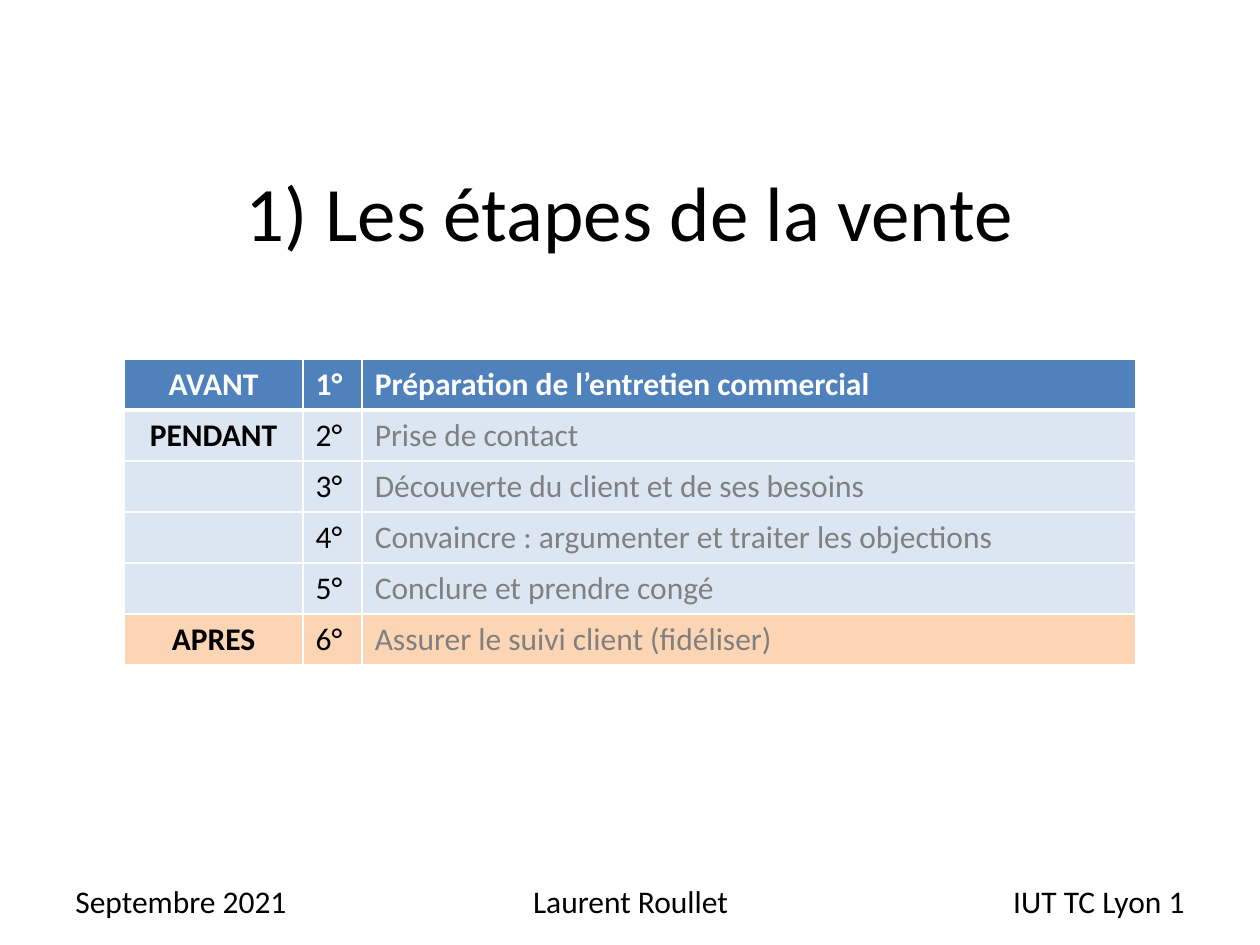
from lxml import etree
from pptx import Presentation
from pptx import util as u
from pptx.dml import color
from pptx.enum import text
from pptx.oxml import ns

TITLE = "1) Les étapes de la vente"
FOOTERS = [
    ("Septembre 2021", 0.05, 0.233, text.PP_ALIGN.LEFT),
    ("Laurent Roullet", 0.342, 0.317, text.PP_ALIGN.CENTER),
    ("IUT TC Lyon 1", 0.717, 0.233, text.PP_ALIGN.RIGHT),
]
STEPS = [
    ("AVANT", "Préparation de l’entretien commercial", "header"),
    ("PENDANT", "Prise de contact", "during"),
    ("", "Découverte du client et de ses besoins", "during"),
    ("", "Convaincre : argumenter et traiter les objections", "during"),
    ("", "Conclure et prendre congé", "during"),
    ("APRES", "Assurer le suivi client (fidéliser)", "after"),
]
THEME = {
    "font": "Calibri", "title": 44, "body": 18,
    "ink": "000000", "muted": "808080", "white": "FFFFFF",
    "header": "4F81BD", "during": "DCE6F2", "after": "FCD5B5",
    "border": 1, "header_border": 3,
}
WIDTH, HEIGHT = u.Inches(10), u.Inches(7.5)
COLUMN_SHARES = (0.142, 0.047, 0.614)
TABLE_LEFT, TABLE_TOP, ROW_SHARE = 0.0985, 0.38, 0.054


def style(paragraph, size, ink, align, bold=False):
    paragraph.alignment = align
    font = paragraph.font
    font.name, font.size, font.bold = THEME["font"], u.Pt(size), bold
    font.color.rgb = color.RGBColor.from_string(THEME[ink])


def add_label(slide, content, box, size, align, anchor):
    left, top, width, height = box
    shape = slide.shapes.add_textbox(
        int(left * WIDTH), int(top * HEIGHT), int(width * WIDTH), int(height * HEIGHT))
    frame = shape.text_frame
    frame.word_wrap = True
    frame.vertical_anchor = anchor
    frame.text = content
    style(frame.paragraphs[0], size, "ink", align)


def set_borders(cell, bottom, top):
    properties = cell._tc.get_or_add_tcPr()
    widths = {"L": THEME["border"], "R": THEME["border"], "T": top, "B": bottom}
    for side, width in widths.items():
        line = etree.SubElement(properties, ns.qn(f"a:ln{side}"), w=str(u.Pt(width)))
        fill = etree.SubElement(line, ns.qn("a:solidFill"))
        etree.SubElement(fill, ns.qn("a:srgbClr"), val=THEME["white"])


def add_steps(slide):
    table = slide.shapes.add_table(
        len(STEPS), len(COLUMN_SHARES),
        int(TABLE_LEFT * WIDTH), int(TABLE_TOP * HEIGHT),
        int(sum(COLUMN_SHARES) * WIDTH), int(len(STEPS) * ROW_SHARE * HEIGHT)).table
    for column, share in zip(table.columns, COLUMN_SHARES):
        column.width = int(share * WIDTH)
    for row, (phase, step, kind) in enumerate(STEPS):
        header = kind == "header"
        inks = ("white",) * 3 if header else ("ink", "ink", "muted")
        bottom = THEME["header_border" if header else "border"]
        top = THEME["header_border" if row == 1 else "border"]
        for column, content in enumerate((phase, f"{row + 1}°", step)):
            cell = table.cell(row, column)
            cell.text = content
            align = text.PP_ALIGN.LEFT if column else text.PP_ALIGN.CENTER
            style(cell.text_frame.paragraphs[0], THEME["body"], inks[column], align,
                  header or column == 0)
            set_borders(cell, bottom, top)
            cell.fill.solid()
            cell.fill.fore_color.rgb = color.RGBColor.from_string(THEME[kind])


def main():
    presentation = Presentation()
    presentation.slide_width, presentation.slide_height = WIDTH, HEIGHT
    slide = presentation.slides.add_slide(presentation.slide_layouts[6])
    add_label(slide, TITLE, (0.031, 0.115, 0.938, 0.215), THEME["title"],
              text.PP_ALIGN.CENTER, text.MSO_ANCHOR.MIDDLE)
    for content, left, width, align in FOOTERS:
        add_label(slide, content, (left, 0.927, width, 0.053), THEME["body"],
                  align, text.MSO_ANCHOR.TOP)
    add_steps(slide)
    presentation.save("out.pptx")


if __name__ == "__main__":
    main()
